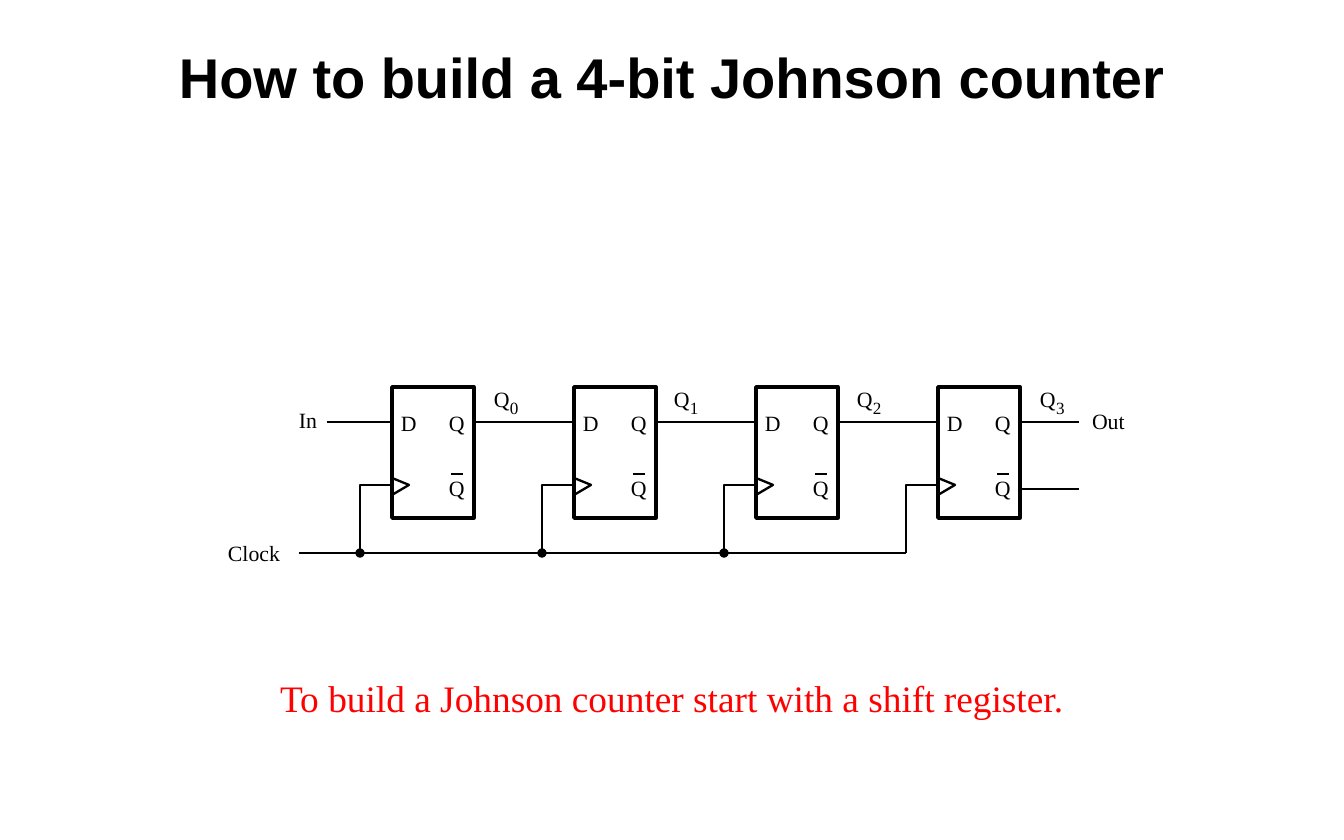
from pptx import Presentation
from pptx.dml.color import RGBColor
from pptx.enum.shapes import MSO_CONNECTOR, MSO_SHAPE
from pptx.enum.text import MSO_ANCHOR, MSO_AUTO_SIZE, PP_ALIGN
from pptx.oxml.ns import qn
from pptx.util import Emu, Pt
from lxml.etree import SubElement

PX = 914400 / 112
C = {"ink": "000000", "paper": "FFFFFF", "note": "FF0000"}
C = {name: RGBColor.from_string(value) for name, value in C.items()}

prs = Presentation()
prs.slide_width, prs.slide_height = Emu(round(1344 * PX)), Emu(round(840 * PX))
s = prs.slides.add_slide(prs.slide_layouts[5])


def add_label(text, x, y, w, h, size=14, color="ink", tight=True):
    sp = s.shapes.add_textbox(*[Emu(round(v * PX)) for v in (x, y, w, h)])
    tf = sp.text_frame
    tf.word_wrap = False
    tf.auto_size = MSO_AUTO_SIZE.SHAPE_TO_FIT_TEXT
    if tight:
        tf.margin_left = tf.margin_right = tf.margin_top = tf.margin_bottom = 0
    r = tf.paragraphs[0].add_run()
    r.text = text
    r.font.name = "Times New Roman"
    r.font.size = Pt(size)
    r.font.color.rgb = C[color]


def add_wire(*points):
    points = [(round(x * PX), round(y * PX)) for x, y in points]
    if len(points) == 2:
        sp = s.shapes.add_connector(MSO_CONNECTOR.STRAIGHT, *points[0], *points[1])
        SubElement(sp._element.spPr, qn("a:effectLst"))
    else:
        fb = s.shapes.build_freeform(*points[0], scale=1.0)
        fb.add_line_segments(points[1:], close=False)
        sp = fb.convert_to_shape()
        sp.shadow.inherit = False
        sp.fill.background()
    sp.line.color.rgb = C["ink"]
    sp.line.width = Pt(1.5)


title = s.shapes.title
title.left, title.top, title.width, title.height = [
    Emu(round(v * PX)) for v in (112, 34, 1120, 84)]
tf = title.text_frame
tf.vertical_anchor = MSO_ANCHOR.MIDDLE
p = tf.paragraphs[0]
p.alignment = PP_ALIGN.CENTER
r = p.add_run()
r.text = "How to build a 4-bit Johnson counter"
r.font.name = "Arial"
r.font.size = Pt(36)
r.font.bold = True
r.font.color.rgb = C["ink"]

add_label("To build a Johnson counter start with a shift register.",
          269, 670, 851, 56, 24, "note", tight=False)

BOX_X, BOX_Y, BOX_W, BOX_H, STEP, COUNT = 392, 387, 82, 131, 182, 4
DATA_Y, PIN_Y, INV_Y, CLOCK_Y = 422, 485, 489, 553
TAP, DOT, OUT_X = 32, 7, 1079

for i in range(COUNT):
    x = BOX_X + i * STEP
    right = x + BOX_W
    last = i == COUNT - 1
    sp = s.shapes.add_shape(MSO_SHAPE.RECTANGLE, *[
        Emu(round(v * PX)) for v in (x, BOX_Y, BOX_W, BOX_H)])
    sp.shadow.inherit = False
    sp.fill.solid()
    sp.fill.fore_color.rgb = C["paper"]
    sp.line.color.rgb = C["ink"]
    sp.line.width = Pt(2.25)
    add_label("D", x + 9, 410, 21, 27)
    add_label("Q", x + 57, 410, 21, 27)
    add_label("Q", x + 57, 475, 21, 27)
    add_wire((x + 59, 474), (x + 71, 474))
    add_wire((x, 495), (x + 17, PIN_Y), (x, 478))
    add_wire((right, DATA_Y), (OUT_X if last else x + STEP, DATA_Y))
    add_wire((x - TAP, CLOCK_Y), (x - TAP, PIN_Y), (x, PIN_Y))
    label_x = right + (20, 18, 19, 20)[i]
    add_label("Q", label_x, 386, 21, 27)
    add_label(str(i), label_x + 16, 397, 13, 21, 11)
    if not last:
        sp = s.shapes.add_shape(MSO_SHAPE.OVAL, *[
            Emu(round(v * PX))
            for v in (x - TAP - DOT / 2, CLOCK_Y - DOT / 2, DOT, DOT)])
        sp.shadow.inherit = False
        sp.fill.solid()
        sp.fill.fore_color.rgb = C["ink"]
        sp.line.color.rgb = C["ink"]
        sp.line.width = Pt(1.5)

add_wire((327, DATA_Y), (BOX_X, DATA_Y))
add_wire((right, INV_Y), (OUT_X, INV_Y))
add_wire((299, CLOCK_Y), (x - TAP, CLOCK_Y))
add_label("In", 299, 407, 26, 27)
add_label("Out", 1092, 408, 42, 27)
add_label("Clock", 228, 540, 62, 27)

prs.save("out.pptx")
